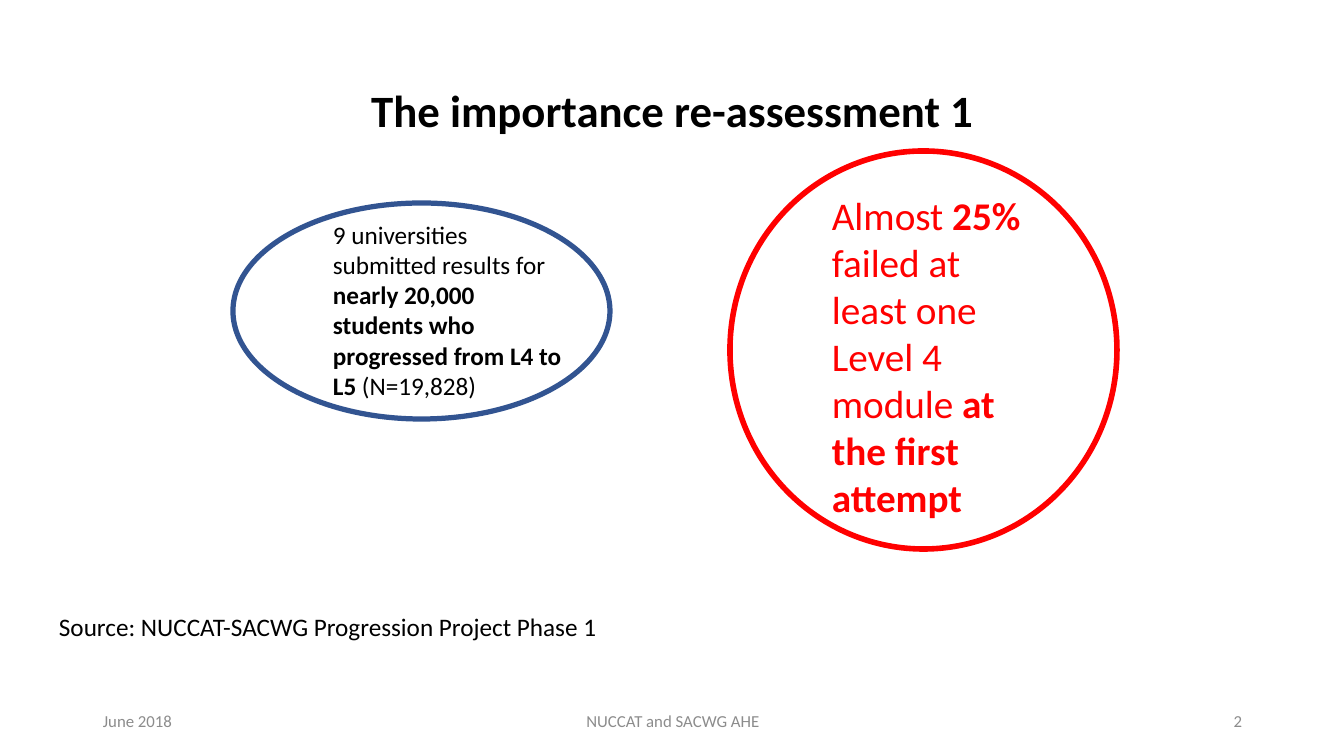
from pptx import Presentation
from pptx.dml.color import RGBColor
from pptx.enum.shapes import MSO_SHAPE as SHAPE
from pptx.enum.text import MSO_ANCHOR as ANCHOR, PP_ALIGN as ALIGN
from pptx.util import Emu, Pt

PX = 12192000 / 1344
BLACK = RGBColor(0x00, 0x00, 0x00)
BLUE = RGBColor(0x32, 0x54, 0x91)
RED = RGBColor(0xFF, 0x00, 0x00)
GREY = RGBColor(0x8C, 0x8C, 0x8C)


def box(*lengths):
    """Turn px lengths into EMU."""
    return [Emu(round(n * PX)) for n in lengths]


def write(shape, runs, size, color, align=ALIGN.LEFT, anchor=ANCHOR.TOP):
    """Fill a shape with one paragraph of (text, bold) runs."""
    tf = shape.text_frame
    tf.word_wrap = True
    tf.vertical_anchor = anchor
    p = tf.paragraphs[0]
    p.alignment = align
    for text, bold in runs:
        r = p.add_run()
        r.text = text
        r.font.name = "Calibri"
        r.font.size = Pt(size)
        r.font.bold = bold
        r.font.color.rgb = color
    return p


prs = Presentation()
prs.slide_width, prs.slide_height = box(1344, 756)
s = prs.slides.add_slide(prs.slide_layouts[5])

# Title
title = s.shapes.title
title.left, title.top, title.width, title.height = box(93, 40, 1159, 146)
p = write(title, [("The importance re-assessment 1", True)], 32, BLACK,
          ALIGN.CENTER, ANCHOR.MIDDLE)
p.line_spacing = 0.9

# Findings, each ringed by an ellipse
sample = [("9 universities submitted results for ", False),
          ("nearly 20,000 students who progressed from L4 to L5", True),
          (" (N=19,828)", False)]
failures = [("Almost", False), (" 25%", True),
            (" failed at least one Level 4 module ", False),
            ("at the first attempt", True)]
findings = [
    (sample, 18, BLACK, (323, 214, 254, 194), (233, 203, 377, 216), BLUE, 3.75),
    (failures, 28, RED, (822, 186, 230, 343), (730, 151, 387, 398), RED, 4),
]
for runs, size, color, text_area, ring_area, ring_color, weight in findings:
    write(s.shapes.add_textbox(*box(*text_area)), runs, size, color)
    ring = s.shapes.add_shape(SHAPE.OVAL, *box(*ring_area))
    ring.shadow.inherit = False
    ring.fill.background()
    ring.line.color.rgb = ring_color
    ring.line.width = Pt(weight)

# Source
source = s.shapes.add_textbox(*box(49, 606, 593, 40))
write(source, [("Source: NUCCAT-SACWG Progression Project Phase 1", False)],
      18, BLACK)

# Footer
footer = [("June 2018", 93, 302, ALIGN.LEFT),
          ("NUCCAT and SACWG AHE", 446, 454, ALIGN.CENTER),
          ("2", 950, 302, ALIGN.RIGHT)]
for text, left, width, align in footer:
    tb = s.shapes.add_textbox(*box(left, 701, width, 40))
    write(tb, [(text, False)], 12, GREY, align, ANCHOR.MIDDLE)

prs.save("out.pptx")
